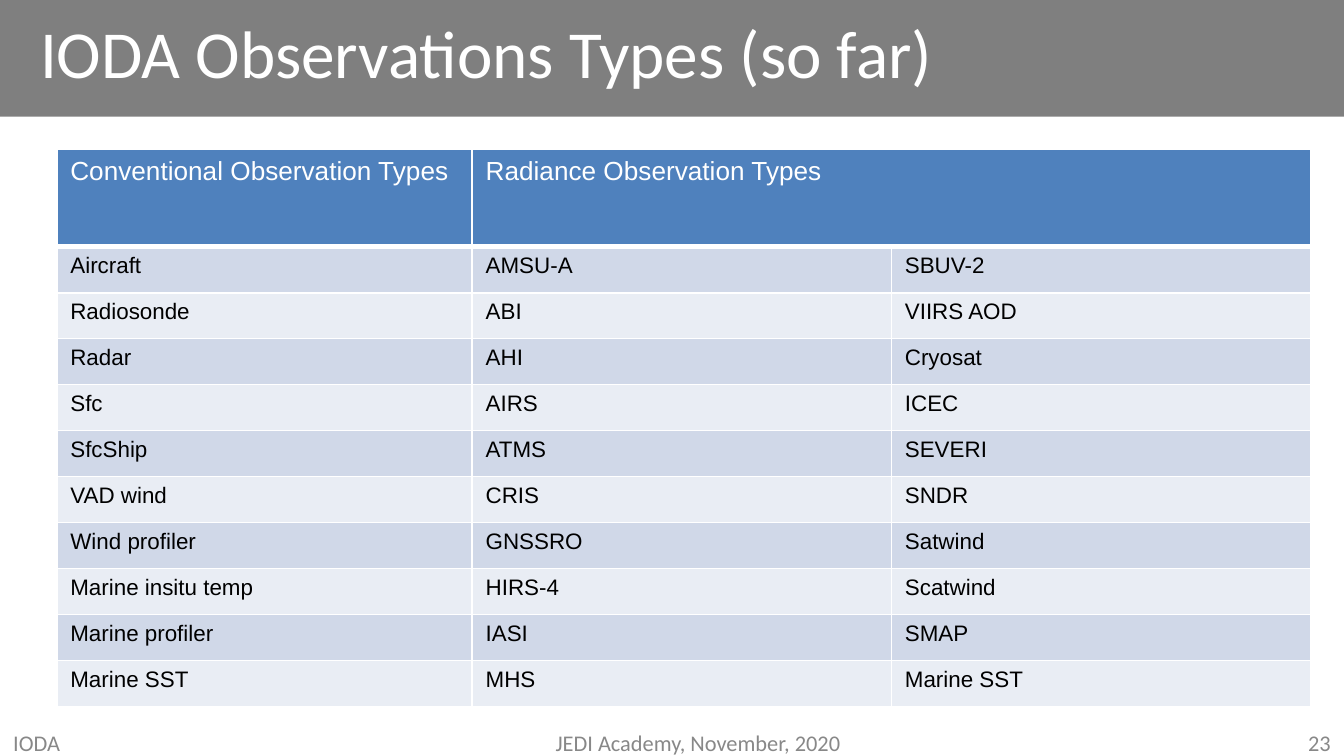
from lxml.etree import SubElement
from pptx import Presentation
from pptx.dml.color import RGBColor
from pptx.enum.shapes import MSO_SHAPE as Shape
from pptx.enum.text import MSO_ANCHOR as Anchor, PP_ALIGN as Align
from pptx.oxml.ns import qn
from pptx.util import Pt

PAGE_WIDTH, PAGE_HEIGHT = 720, 405
TITLE = "IODA Observations Types (so far)"
HEADERS = ["Conventional Observation Types", "Radiance Observation Types", ""]
ROWS = [
    ("Aircraft", "AMSU-A", "SBUV-2"),
    ("Radiosonde", "ABI", "VIIRS AOD"),
    ("Radar", "AHI", "Cryosat"),
    ("Sfc", "AIRS", "ICEC"),
    ("SfcShip", "ATMS", "SEVERI"),
    ("VAD wind", "CRIS", "SNDR"),
    ("Wind profiler", "GNSSRO", "Satwind"),
    ("Marine insitu temp", "HIRS-4", "Scatwind"),
    ("Marine profiler", "IASI", "SMAP"),
    ("Marine SST", "MHS", "Marine SST"),
]
# text, left, width, alignment
FOOTERS = [
    ("IODA", 0, 168, Align.LEFT),
    ("JEDI Academy, November, 2020", 260, 228, Align.CENTER),
    ("23", 552, 168, Align.RIGHT),
]
TABLE_LEFT, TABLE_TOP = 30.5, 80.2
COLUMN_WIDTHS = [222.5, 224.6, 224.6]
HEADER_HEIGHT, ROW_HEIGHT = 52, 24.65
WHITE, BLACK, GREY = "FFFFFF", "000000", "888888"
HEADER_FILL = "4F81BD"
BANDS = ["D0D8E8", "E9EDF4"]


def color(value):
    return RGBColor.from_string(value)


def write(frame, text, *, size, ink, font="Calibri", align=Align.LEFT):
    para = frame.paragraphs[0]
    para.alignment = align
    span = para.add_run()
    span.text = text
    span.font.name = font
    span.font.size = Pt(size)
    span.font.color.rgb = color(ink)


def add_text(page, text, left, top, width, height, **style):
    box = page.shapes.add_textbox(Pt(left), Pt(top), Pt(width), Pt(height))
    box.text_frame.word_wrap = True
    box.text_frame.vertical_anchor = Anchor.MIDDLE
    write(box.text_frame, text, **style)


def set_borders(cell, bottom):
    """White lines, one point wide except at the bottom."""
    properties = cell._tc.get_or_add_tcPr()
    for side, width in (("L", 1), ("R", 1), ("T", 1), ("B", bottom)):
        line = SubElement(properties, qn(f"a:ln{side}"), w=str(Pt(width)))
        fill = SubElement(line, qn("a:solidFill"))
        SubElement(fill, qn("a:srgbClr"), val=WHITE)


def add_title_band(page):
    band = page.shapes.add_shape(Shape.RECTANGLE, 0, 0, Pt(PAGE_WIDTH), Pt(62.5))
    band.shadow.inherit = False
    band.line.fill.background()
    band.fill.solid()
    band.fill.fore_color.rgb = color(BLACK)
    shade = band._element.spPr.find(f"{qn('a:solidFill')}/{qn('a:srgbClr')}")
    SubElement(shade, qn("a:alpha"), val="50000")


def add_observation_table(page):
    heights = [HEADER_HEIGHT] + [ROW_HEIGHT] * len(ROWS)
    table = page.shapes.add_table(
        len(heights), len(COLUMN_WIDTHS), Pt(TABLE_LEFT), Pt(TABLE_TOP),
        Pt(sum(COLUMN_WIDTHS)), Pt(sum(heights))).table
    for column, width in zip(table.columns, COLUMN_WIDTHS):
        column.width = Pt(width)
    for row, height in zip(table.rows, heights):
        row.height = Pt(height)
    table.cell(0, 1).merge(table.cell(0, 2))

    for r, texts in enumerate([HEADERS] + ROWS):
        is_header = r == 0
        for c, text in enumerate(texts):
            cell = table.cell(r, c)
            set_borders(cell, bottom=3 if is_header else 1)
            cell.fill.solid()
            cell.fill.fore_color.rgb = color(HEADER_FILL if is_header else BANDS[(r - 1) % 2])
            if text:
                write(cell.text_frame, text, font="Arial",
                      size=14 if is_header else 12, ink=WHITE if is_header else BLACK)


deck = Presentation()
deck.slide_width, deck.slide_height = Pt(PAGE_WIDTH), Pt(PAGE_HEIGHT)
page = deck.slides.add_slide(deck.slide_layouts[6])
add_title_band(page)
add_text(page, TITLE, 14.4, 0, 600, 55.5, size=36, ink=WHITE)
add_observation_table(page)
for text, left, width, align in FOOTERS:
    add_text(page, text, left, 390.2, width, 14.8, size=12, ink=GREY, align=align)
deck.save("out.pptx")
